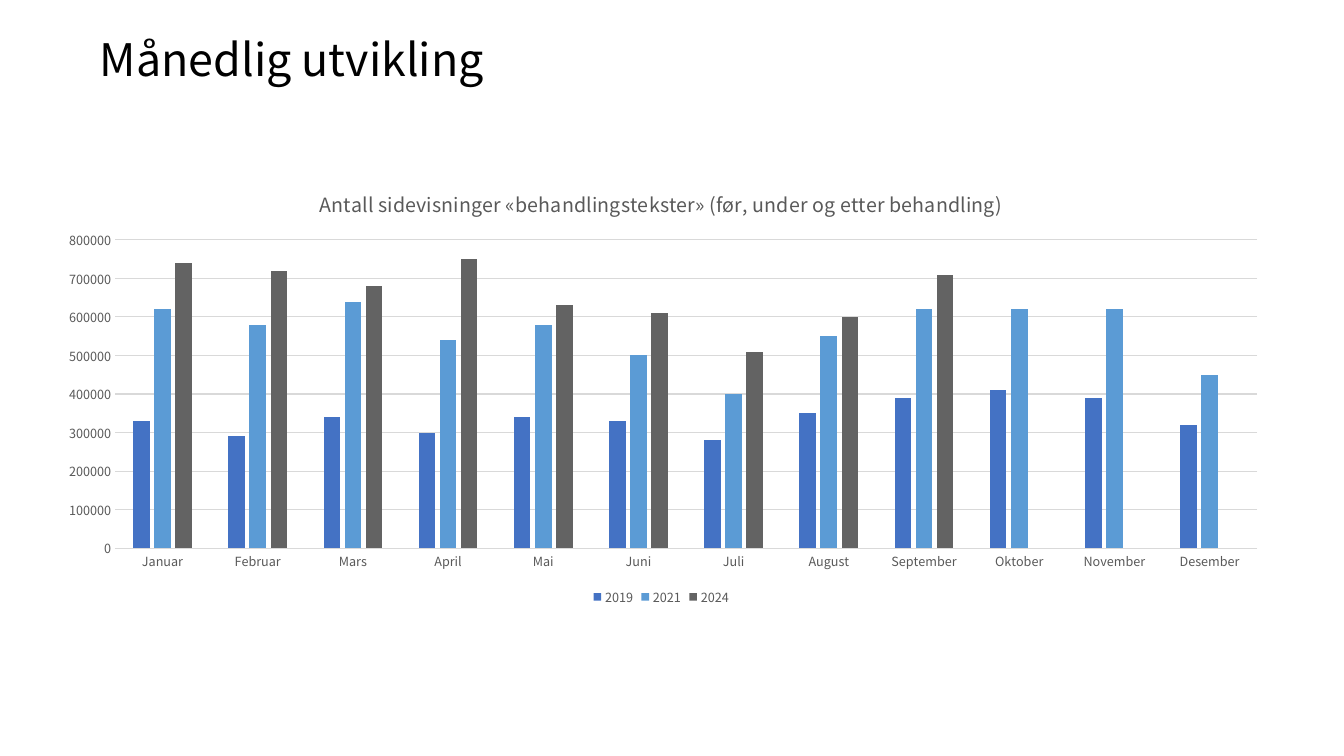
import pptx
import pptx.chart.data
import pptx.dml.color
import pptx.enum.chart
import pptx.enum.text
import pptx.oxml
import pptx.util
from pptx.util import Cm, Pt

FONT = "Noto Sans CJK TC"
COLORS = {
    "background": "FFFFFF",
    "heading": "000000",
    "label": "595959",
    "grid": "D9D9D9",
    "2019": "4472C4",
    "2021": "5B9BD5",
    "2024": "636363",
}
MONTHS = ["Januar", "Februar", "Mars", "April", "Mai", "Juni", "Juli",
          "August", "September", "Oktober", "November", "Desember"]
VIEWS_IN_THOUSANDS = {
    "2019": [330, 290, 340, 300, 340, 330, 280, 350, 390, 410, 390, 320],
    "2021": [620, 580, 640, 540, 580, 500, 400, 550, 620, 620, 620, 450],
    "2024": [740, 720, 680, 750, 630, 610, 510, 600, 710, None, None, None],
}
PLOT_AREA = {"x": 0.06, "y": 0.16, "w": 0.92, "h": 0.7}


def color(name):
    return pptx.dml.color.RGBColor.from_string(COLORS[name])


def style_font(font, size, color_name):
    font.name = FONT
    font.size = Pt(size)
    font.bold = False
    font.color.rgb = color(color_name)


def style_line(line):
    line.color.rgb = color("grid")
    line.width = Pt(0.75)


def add_heading(slide, text):
    heading = slide.shapes.title
    heading.left, heading.top = Cm(2.26), Cm(0.74)
    heading.width, heading.height = Cm(26.92), Cm(1.63)
    heading.fill.solid()
    heading.fill.fore_color.rgb = color("background")
    frame = heading.text_frame
    frame.word_wrap = True
    frame.auto_size = pptx.enum.text.MSO_AUTO_SIZE.NONE
    frame.vertical_anchor = pptx.enum.text.MSO_ANCHOR.MIDDLE
    paragraph = frame.paragraphs[0]
    paragraph.alignment = pptx.enum.text.PP_ALIGN.LEFT
    paragraph.line_spacing = 0.9
    run = paragraph.add_run()
    run.text = text
    style_font(run.font, 32, "heading")


def style_axis(axis):
    axis.major_tick_mark = pptx.enum.chart.XL_TICK_MARK.NONE
    axis.minor_tick_mark = pptx.enum.chart.XL_TICK_MARK.NONE
    style_font(axis.tick_labels.font, 9, "label")


def place_plot(chart):
    plot_area = chart.plots[0]._element.getparent()
    for old_layout in plot_area.findall(pptx.oxml.ns.qn("c:layout")):
        plot_area.remove(old_layout)
    edges = "".join(f'<c:{side}Mode val="edge"/>' for side in "xy")
    sizes = "".join(f'<c:{key} val="{share}"/>' for key, share in PLOT_AREA.items())
    plot_area.insert(0, pptx.oxml.parse_xml(
        f'<c:layout {pptx.oxml.ns.nsdecls("c")}><c:manualLayout>'
        f'<c:layoutTarget val="inner"/>{edges}{sizes}'
        '</c:manualLayout></c:layout>'))


def add_views_chart(slide, title):
    views = pptx.chart.data.CategoryChartData()
    views.categories = MONTHS
    for year, thousands in VIEWS_IN_THOUSANDS.items():
        views.add_series(year, [None if n is None else n * 1000 for n in thousands])
    chart = slide.shapes.add_chart(
        pptx.enum.chart.XL_CHART_TYPE.COLUMN_CLUSTERED,
        Cm(1.02), Cm(4.27), Cm(31.29), Cm(11.1), views).chart
    style_font(chart.font, 10, "heading")

    chart.has_title = True
    run = chart.chart_title.text_frame.paragraphs[0].add_run()
    run.text = title
    style_font(run.font, 14, "label")
    chart.chart_title.include_in_layout = False

    chart.has_legend = True
    chart.legend.position = pptx.enum.chart.XL_LEGEND_POSITION.BOTTOM
    chart.legend.include_in_layout = False
    style_font(chart.legend.font, 9, "label")

    months, counts = chart.category_axis, chart.value_axis
    style_axis(months)
    style_axis(counts)
    style_line(months.format.line)
    counts.format.line.fill.background()
    style_line(counts.major_gridlines.format.line)
    counts.minimum_scale, counts.maximum_scale = 0, 800000
    counts.major_unit = 100000
    counts.tick_labels.number_format = "0"
    counts.tick_labels.number_format_is_linked = False

    columns = chart.plots[0]
    columns.gap_width = 219
    columns.overlap = -27
    columns.vary_by_categories = False
    for year in columns.series:
        year.format.fill.solid()
        year.format.fill.fore_color.rgb = color(year.name)
        year.invert_if_negative = False
    place_plot(chart)


def main():
    deck = pptx.Presentation()
    deck.slide_width, deck.slide_height = Cm(33.87), Cm(19.05)
    slide = deck.slides.add_slide(deck.slide_layouts[5])
    add_heading(slide, "Månedlig utvikling")
    add_views_chart(
        slide, "Antall sidevisninger «behandlingstekster» (før, under og etter behandling)")
    deck.save("out.pptx")


if __name__ == "__main__":
    main()
